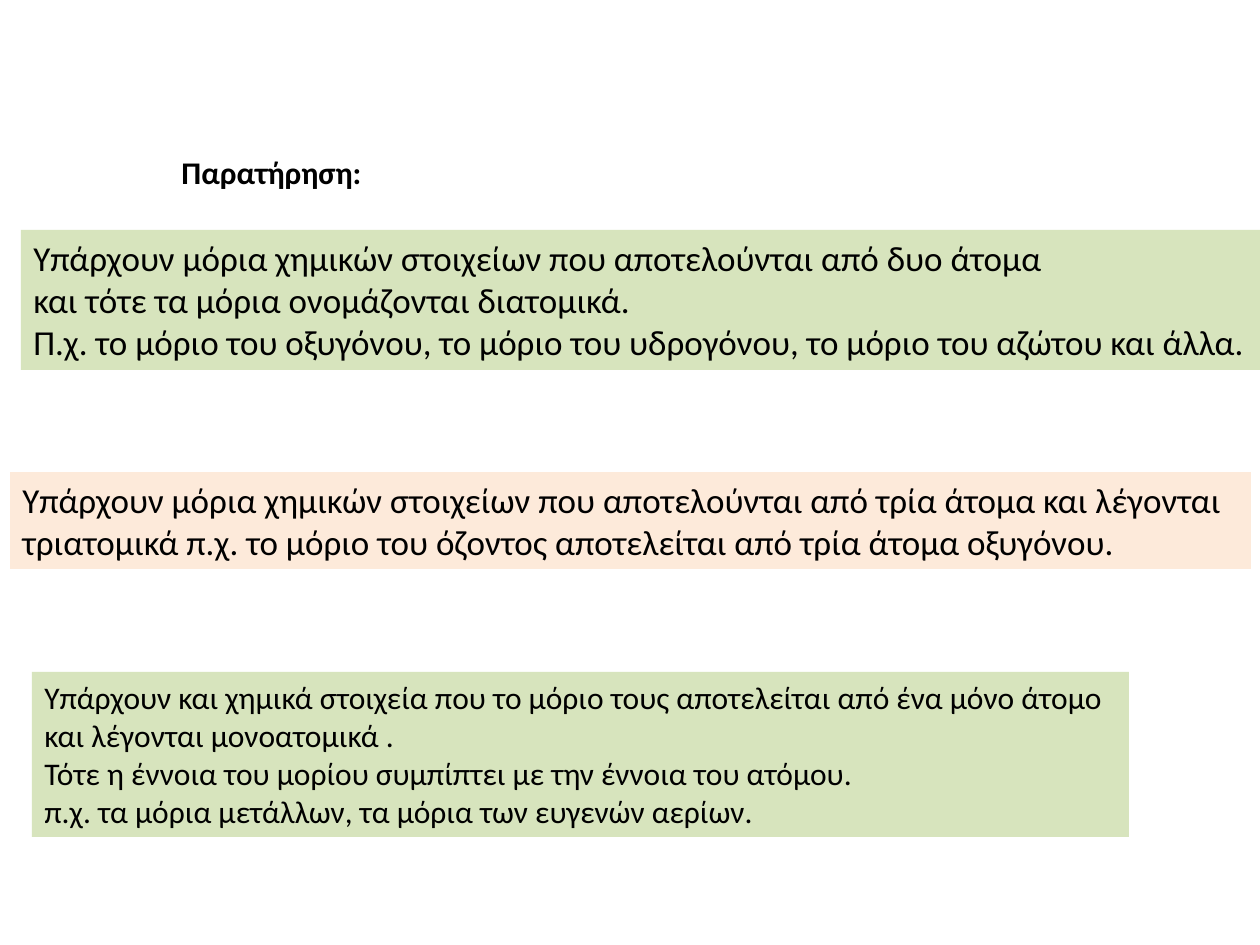
"""Build the slide on molecules with one, two or three atoms."""
import dataclasses

import pptx
import pptx.dml.color
import pptx.enum.text
import pptx.util

RGB = pptx.dml.color.RGBColor
Align = pptx.enum.text.PP_ALIGN
BLACK = RGB(0x00, 0x00, 0x00)
GREEN = RGB(0xD7, 0xE4, 0xBD)
PEACH = RGB(0xFD, 0xEA, 0xDA)
FONT = "Calibri"
SCALE = 914400 / 126


@dataclasses.dataclass(frozen=True)
class Panel:
    left: int
    top: int
    width: int
    height: int
    fill: RGB
    size: int
    lines: tuple[str, ...]


PANELS = (
    Panel(21, 230, 1245, 140, GREEN, 20, (
        "Υπάρχουν μόρια χημικών στοιχείων που αποτελούνται από δυο άτομα",
        "και τότε τα μόρια ονομάζονται διατομικά.",
        "Π.χ. το μόριο του οξυγόνου, το μόριο του υδρογόνου, το μόριο του αζώτου και άλλα.",
    )),
    Panel(10, 472, 1241, 97, PEACH, 20, (
        "Υπάρχουν μόρια χημικών στοιχείων που αποτελούνται από τρία άτομα και λέγονται",
        "τριατομικά π.χ. το μόριο του όζοντος αποτελείται από τρία άτομα οξυγόνου.",
    )),
    Panel(32, 672, 1097, 165, GREEN, 18, (
        "Υπάρχουν και χημικά στοιχεία που το μόριο τους αποτελείται από ένα μόνο άτομο",
        "και λέγονται μονοατομικά .",
        "Τότε η έννοια του μορίου συμπίπτει με την έννοια του ατόμου.",
        "π.χ. τα μόρια μετάλλων, τα μόρια των ευγενών αερίων.",
    )),
)


def px(count: int) -> int:
    return round(count * SCALE)


def write(shape, lines: tuple[str, ...], *, size: int, bold: bool = False,
          align: Align = Align.LEFT) -> None:
    frame = shape.text_frame
    frame.text = "\n".join(lines)
    frame.word_wrap = False
    frame.auto_size = pptx.enum.text.MSO_AUTO_SIZE.SHAPE_TO_FIT_TEXT
    frame.vertical_anchor = pptx.enum.text.MSO_ANCHOR.TOP
    for para in frame.paragraphs:
        para.alignment = align
        for run in para.runs:
            font = run.font
            font.name, font.size, font.bold = FONT, pptx.util.Pt(size), bold
            font.color.rgb = BLACK


def draw(slide, panel: Panel) -> None:
    area = map(px, (panel.left, panel.top, panel.width, panel.height))
    box = slide.shapes.add_textbox(*area)
    box.fill.solid()
    box.fill.fore_color.rgb = panel.fill
    write(box, panel.lines, size=panel.size)


def main() -> None:
    deck = pptx.Presentation()
    deck.slide_width, deck.slide_height = px(1260), px(945)
    slide = deck.slides.add_slide(deck.slide_layouts[5])
    title = slide.shapes.title
    title.left, title.top, title.width, title.height = map(px, (168, 147, 207, 50))
    write(title, ("Παρατήρηση:",), size=18, bold=True, align=Align.CENTER)
    for panel in PANELS:
        draw(slide, panel)
    deck.save("out.pptx")


if __name__ == "__main__":
    main()
